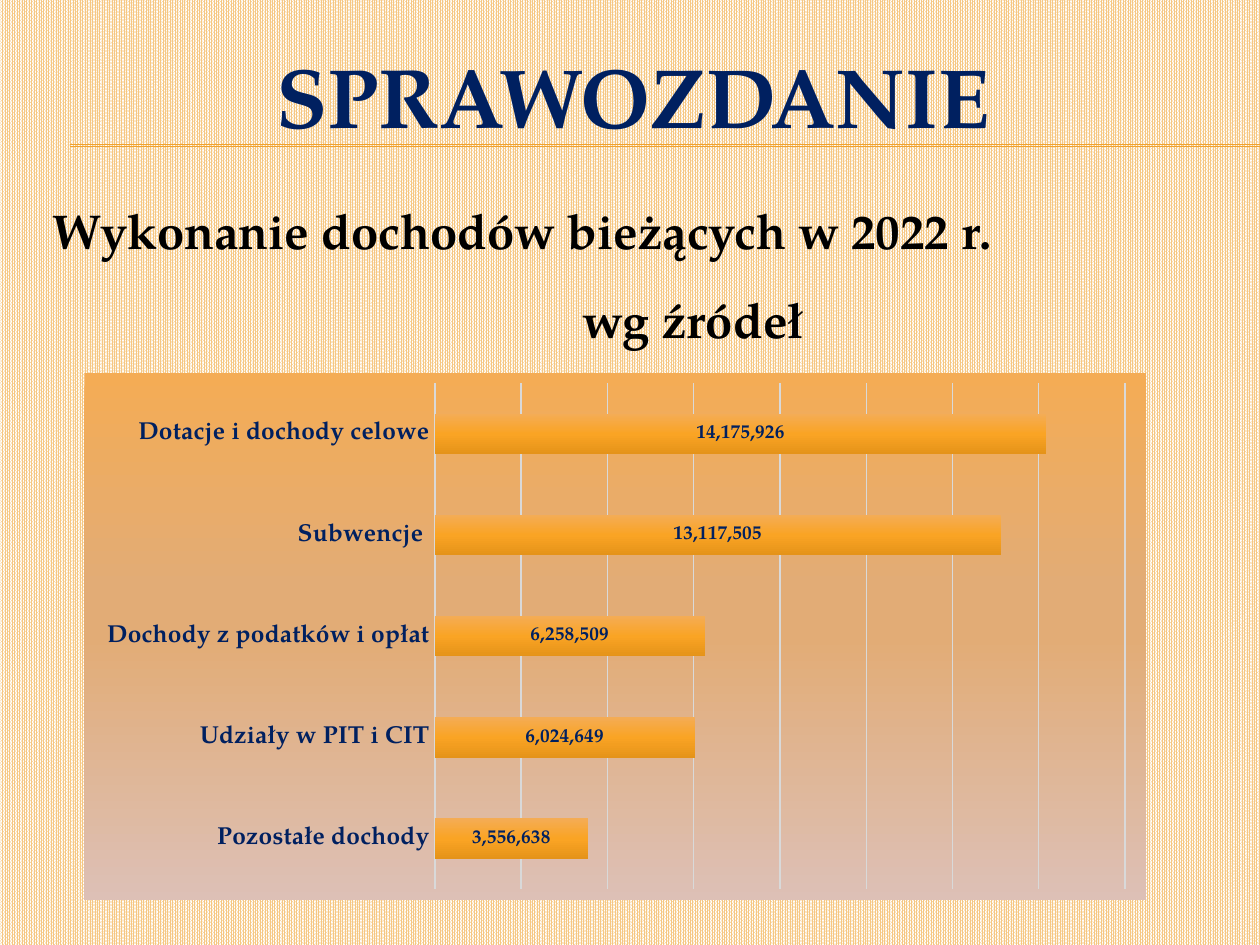
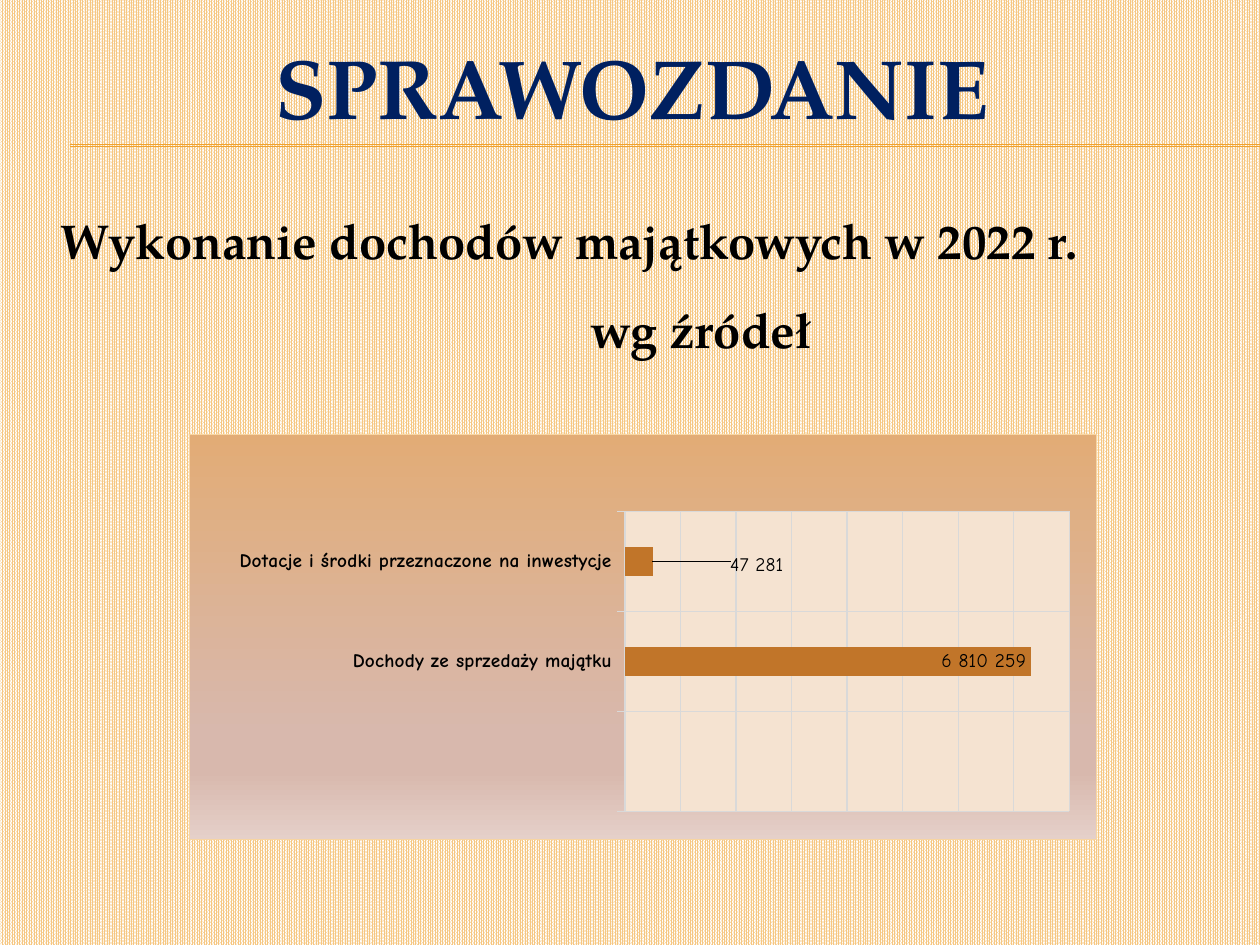
from lxml import etree
from pptx import Presentation
from pptx import util as u
from pptx.chart.data import CategoryChartData
from pptx.dml.color import RGBColor
from pptx.enum import chart as ch, dml, shapes, text
from pptx.oxml import parse_xml
from pptx.oxml.ns import nsdecls, qn

NAVY = RGBColor(0x00, 0x20, 0x60)
BLACK = RGBColor(0, 0, 0)
WHITE = RGBColor(0xFF, 0xFF, 0xFF)
SAND = RGBColor(0xF6, 0xC7, 0x82)
AMBER = RGBColor(0xF0, 0xA2, 0x2E)
GREY = RGBColor(0xD9, 0xD9, 0xD9)
CREAM = RGBColor(0xF5, 0xE3, 0xD1)
PEACH = RGBColor(0xF8, 0xD5, 0xA1)
BROWN = RGBColor(0xC1, 0x75, 0x29)
GOLD = RGBColor(0xF4, 0xAC, 0x55)
TAN = RGBColor(0xE2, 0xAC, 0x76)
ROSE = RGBColor(0xD8, 0xB8, 0xAD)

DUSK = [(0, GOLD), (41, TAN), (50, TAN), (100, RGBColor(0xDD, 0xC0, 0xB6))]
DAWN = [(0, TAN), (74, ROSE), (83, ROSE), (100, RGBColor(0xE5, 0xD0, 0xC9))]
GLOW = [(0, GOLD), (50, RGBColor(0xFA, 0xA4, 0x24)),
        (100, RGBColor(0xE5, 0x93, 0x19))]

SERIF = "TeX Gyre Pagella"
COMIC = "Comic Neue"
SANS = "Cabin"


def style(font, size, name=SERIF, color=BLACK, bold=True):
    font.size, font.name, font.bold = u.Pt(size), name, bold
    font.color.rgb = color


def write(para, words, align=text.PP_ALIGN.CENTER, left=0, line=None,
          before=0, **font):
    """Fill a paragraph with unbulleted text; left is its margin in cm."""
    run = para.add_run()
    run.text = words
    style(run.font, **font)
    para.alignment = align
    para.space_before = u.Pt(before)
    if line:
        para.line_spacing = line
    props = para._p.get_or_add_pPr()
    props.set("marL", str(u.Cm(left)))
    props.set("indent", "0")
    etree.SubElement(props, qn("a:buNone"))


def fade(stops):
    """Top-to-bottom gradient fill as XML."""
    marks = "".join(f'<a:gs pos="{at * 1000}"><a:srgbClr val="{color}"/></a:gs>'
                    for at, color in stops)
    return (f'<a:gradFill {nsdecls("a")} rotWithShape="1"><a:gsLst>{marks}</a:gsLst>'
            '<a:lin ang="5400000" scaled="0"/></a:gradFill>')


def flat(color):
    return f'<a:solidFill><a:srgbClr val="{color}"/></a:solidFill>'


def props(fill, edge=None):
    """Shape properties of a chart part."""
    line = f'<a:ln w="9525">{flat(edge)}</a:ln>' if edge else "<a:ln><a:noFill/></a:ln>"
    return parse_xml(f'<c:spPr {nsdecls("c", "a")}>{fill}{line}</c:spPr>')


def layout(inner=False, **box):
    """Manual layout from fractions x, y, w, h."""
    target = '<c:layoutTarget val="inner"/>' if inner else ""
    modes = '<c:xMode val="edge"/><c:yMode val="edge"/>' if inner else ""
    sides = "".join(f'<c:{key} val="{val}"/>' for key, val in box.items())
    return parse_xml(f'<c:layout {nsdecls("c")}><c:manualLayout>{target}{modes}'
                     f'{sides}</c:manualLayout></c:layout>')


class Deck:
    def __init__(self):
        self.prs = Presentation()
        self.prs.slide_width, self.prs.slide_height = u.Cm(25.4), u.Cm(19.05)
        fill = self.prs.slide_master.background.fill
        fill.patterned()
        fill.pattern = dml.MSO_PATTERN.PERCENT_90
        fill.fore_color.rgb, fill.back_color.rgb = SAND, WHITE
        self.slide = None

    def add(self):
        first = self.slide is None
        self.slide = self.prs.slides.add_slide(self.prs.slide_layouts[1])
        if first:
            for top in (2.92, 2.95):
                self.rule(top)

    def rule(self, top):
        """Draw a title rule and hand it to the master."""
        line = self.slide.shapes.add_connector(
            shapes.MSO_CONNECTOR.STRAIGHT, u.Cm(1.42), u.Cm(top), u.Cm(25.4), u.Cm(top))
        line.line.color.rgb, line.line.width = AMBER, u.Pt(0.75)
        etree.SubElement(line.element.spPr, qn("a:effectLst"))
        self.prs.slide_master.shapes.element.append(line.element)

    def frame(self, idx, left, top, high):
        """Place a template placeholder and return its text frame."""
        box = self.slide.placeholders[idx]
        box.left, box.top = u.Cm(left), u.Cm(top)
        box.width, box.height = u.Cm(24.13), u.Cm(high)
        box.text_frame.auto_size = text.MSO_AUTO_SIZE.NONE
        box.text_frame.word_wrap = True
        return box.text_frame

    def title(self, left, top):
        frame = self.frame(0, left, top, 2.34)
        frame.vertical_anchor = text.MSO_ANCHOR.MIDDLE
        write(frame.paragraphs[0], "SPRAWOZDANIE ", size=48, color=NAVY)

    def body(self, head, tail, left, top):
        frame = self.frame(1, left, top, 13.41)
        write(frame.paragraphs[0], head, align=text.PP_ALIGN.LEFT,
              line=1.5, before=5.6, size=28)
        write(frame.add_paragraph(), tail, left=2.2, line=1.5, size=28)

    def chart(self, kind, rows, box, plot, back, edge, gap, top, step, form):
        data = CategoryChartData()
        data.categories = [name for name, _ in rows]
        data.add_series("Series 1", [val for _, val in rows])
        chart = self.slide.shapes.add_chart(kind, *map(u.Cm, box), data).chart
        chart.has_legend = chart.has_title = False
        style(chart.font, 10, SANS, bold=False)
        chart.element.find(qn("c:chart")).addnext(props(fade(back), edge))
        area = chart.element.find(".//" + qn("c:plotArea"))
        for old in area.findall(qn("c:layout")):
            area.remove(old)
        area.insert(0, layout(inner=True, **plot))
        bars = chart.plots[0]
        bars.gap_width, bars.vary_by_categories = gap, False
        axis = chart.value_axis
        axis.minimum_scale, axis.maximum_scale, axis.major_unit = 0, top, step
        axis.visible = False
        axis.tick_labels.number_format = form
        axis.tick_labels.number_format_is_linked = False
        self.grid(axis)
        return chart

    def grid(self, axis):
        axis.has_major_gridlines = True
        line = axis.major_gridlines.format.line
        line.color.rgb, line.width = GREY, u.Pt(0.75)

    def names(self, chart, tick, width, **font):
        """Format the category axis."""
        axis = chart.category_axis
        axis.major_tick_mark, axis.minor_tick_mark = tick, ch.XL_TICK_MARK.NONE
        axis.format.line.color.rgb, axis.format.line.width = GREY, u.Pt(width)
        style(axis.tick_labels.font, **font)
        return axis

    def labels(self, series, spot, form, **font):
        labels = series.data_labels
        labels.show_value, labels.position = True, spot
        labels.number_format, labels.number_format_is_linked = form, False
        style(labels.font, **font)

    def current(self):
        self.add()
        self.title(0.91, 0.74)
        self.body("Wykonanie dochodów bieżących w 2022 r.", "wg źródeł", 0.81, 3.33)
        rows = [("Pozostałe dochody", 3556638), ("Udziały w PIT i CIT", 6024649),
                ("Dochody z podatków i opłat", 6258509), ("Subwencje ", 13117505),
                ("Dotacje i dochody celowe", 14175926)]
        chart = self.chart(
            ch.XL_CHART_TYPE.BAR_STACKED, rows, (1.7, 7.52, 21.41, 10.62),
            dict(x=0.33, y=0.02, w=0.65, h=0.96), DUSK, None, 150,
            16_000_000, 2_000_000, "#,##0")
        chart.plots[0].overlap = 100
        self.names(chart, ch.XL_TICK_MARK.NONE, 1, size=14, color=NAVY)
        series = chart.plots[0].series[0]
        series._element.get_or_add_spPr().insert(0, parse_xml(fade(GLOW)))
        self.labels(series, ch.XL_LABEL_POSITION.CENTER, "#,##0", size=11, color=NAVY)

    def capital(self):
        self.add()
        self.title(0.89, 0.56)
        self.body("Wykonanie dochodów majątkowych w 2022 r.", "wg źródeł", 0.97, 3.53)
        rows = [("", None), ("Dochody ze sprzedaży majątku", 3658796),
                ("Dotacje i środki przeznaczone na inwestycje", 248517)]
        chart = self.chart(
            ch.XL_CHART_TYPE.BAR_CLUSTERED, rows, (3.81, 8.74, 18.31, 8.2),
            dict(x=0.48, y=0.19, w=0.49, h=0.74), DAWN, PEACH, 247,
            4_000_000, 500_000, "#,##0.00")
        chart.element.find(".//" + qn("c:plotArea")).append(props(flat(CREAM)))
        self.grid(self.names(chart, ch.XL_TICK_MARK.OUTSIDE, 0.75, size=11, name=COMIC))
        series = chart.plots[0].series[0]
        series.format.fill.solid()
        series.format.fill.fore_color.rgb = BROWN
        spot = ch.XL_LABEL_POSITION.INSIDE_END
        font = dict(size=11, name=COMIC, bold=False)
        self.labels(series, spot, "#,##0.00", **font)
        for at, words in ((1, "6 810 259"), (2, "47 281")):
            label = series.points[at].data_label
            write(label.text_frame.paragraphs[0], words, **font)
            label.position = spot
        last = series._element.findall(".//" + qn("c:dLbl"))[-1]
        last.find(qn("c:idx")).addnext(layout(x=0.15, y=0.01))


def main():
    deck = Deck()
    deck.current()
    deck.capital()
    deck.prs.save("out.pptx")


if __name__ == "__main__":
    main()
